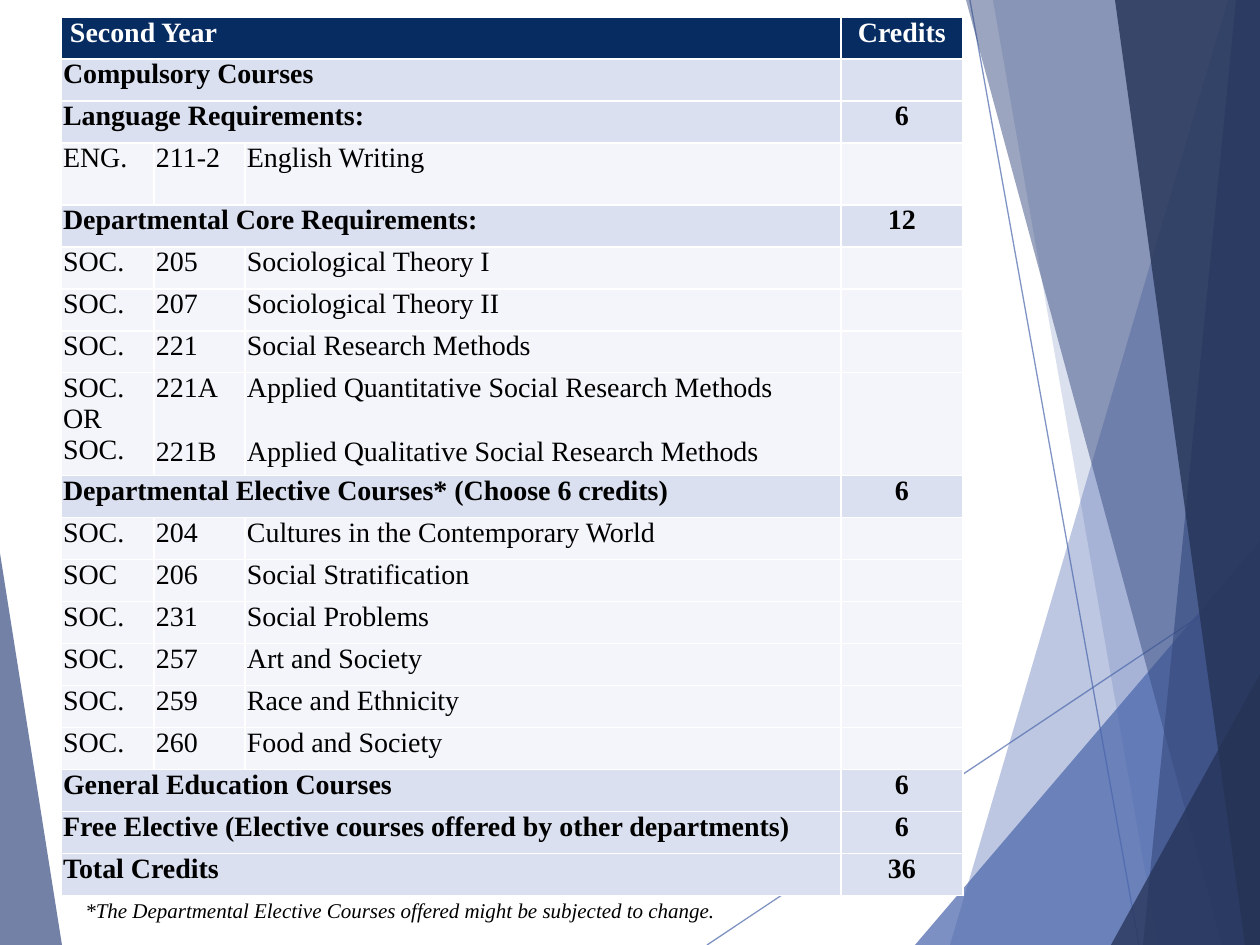
import lxml.etree
import pptx
import pptx.dml.color
import pptx.enum.shapes
import pptx.enum.text
import pptx.oxml.ns
import pptx.util

RGB = pptx.dml.color.RGBColor
WHITE = RGB(0xFF, 0xFF, 0xFF)
BLACK = RGB(0x00, 0x00, 0x00)
NAVY = RGB(0x07, 0x2C, 0x62)
PALE = RGB(0xDA, 0xE0, 0xEF)
BLUE = RGB(0x4A, 0x66, 0xAC)
DEEP = RGB(0x38, 0x4C, 0x81)
DARK = RGB(0x25, 0x33, 0x56)

WIDTH, HEIGHT = 1260, 945
SCALE = 914400 / 126
ROW_HEIGHT = 42
COLUMNS = [93, 91, 596, 122]
CENTER = pptx.enum.text.PP_ALIGN.CENTER
TOP = pptx.enum.text.MSO_ANCHOR.TOP
MIDDLE = pptx.enum.text.MSO_ANCHOR.MIDDLE

COURSES = [
    ("Second Year", "Credits"),
    ("Compulsory Courses", ""),
    ("Language Requirements:", "6"),
    ("ENG.", "211-2", "English Writing", ""),
    ("Departmental Core Requirements:", "12"),
    ("SOC.", "205", "Sociological Theory I", ""),
    ("SOC.", "207", "Sociological Theory II", ""),
    ("SOC.", "221", "Social Research Methods", ""),
    ("SOC.\nOR\nSOC.", "221A\n221B",
     "Applied Quantitative Social Research Methods\n"
     "Applied Qualitative Social Research Methods", ""),
    ("Departmental Elective Courses* (Choose 6 credits)", "6"),
    ("SOC.", "204", "Cultures in the Contemporary World", ""),
    ("SOC", "206", "Social Stratification", ""),
    ("SOC.", "231", "Social Problems", ""),
    ("SOC.", "257", "Art and Society", ""),
    ("SOC.", "259", "Race and Ethnicity", ""),
    ("SOC.", "260", "Food and Society", ""),
    ("General Education Courses", "6"),
    ("Free Elective (Elective courses offered by other departments)", "6"),
    ("Total Credits", "36"),
]
TALL_ROWS = {3: 62, 8: 103}


def px(value):
    return pptx.util.Emu(round(value * SCALE))


def apply(target, values):
    for name, value in values.items():
        setattr(target, name, value)


def child(parent, tag, **values):
    return lxml.etree.SubElement(parent, pptx.oxml.ns.qn(tag), values)


def set_opacity(element, percent):
    color = next(element.iter(pptx.oxml.ns.qn("a:srgbClr")))
    child(color, "a:alpha", val=str(percent * 1000))


class Page:
    def __init__(self, deck):
        self.slide = deck.slides.add_slide(deck.slide_layouts[6])
        self.shapes = self.slide.shapes
        self.font = {"name": "Times New Roman", "size": pptx.util.Pt(16)}

    def line(self, *ends):
        line = self.shapes.add_connector(
            pptx.enum.shapes.MSO_CONNECTOR.STRAIGHT, *map(px, ends))
        line.line.color.rgb = BLUE
        line.line.width = pptx.util.Pt(0.75)
        set_opacity(line._element, 70)
        child(line._element.spPr, "a:effectLst")

    def outline(self, points, color, opacity):
        builder = self.shapes.build_freeform(*points[0], scale=SCALE)
        builder.add_line_segments(points[1:], close=True)
        shape = builder.convert_to_shape()
        shape.shadow.inherit = False
        shape.line.fill.background()
        shape.fill.solid()
        shape.fill.fore_color.rgb = color
        set_opacity(shape._element, opacity)

    def fill_text(self, frame, text, align=None, color=BLACK, **extra):
        lines = text.split("\n")
        for index, words in enumerate(lines):
            para = frame.paragraphs[0] if index == 0 else frame.add_paragraph()
            para.alignment = align
            if len(lines) == 2 and index == 1:
                para.space_before = pptx.util.Pt(18.4)
            if words:
                span = para.add_run()
                span.text = words
                span.font.color.rgb = color
                apply(span.font, {**self.font, **extra})

    def borders(self, cell):
        properties = cell._tc.get_or_add_tcPr()
        for index, side in enumerate(("L", "R", "T", "B")):
            border = child(properties, "a:ln" + side, w="12700")
            child(child(border, "a:solidFill"), "a:srgbClr", val=str(WHITE))
            properties.insert(index, border)

    def table(self, left, top, rows):
        heights = [TALL_ROWS.get(i, ROW_HEIGHT) for i in range(len(rows))]
        table = self.shapes.add_table(
            len(rows), len(COLUMNS), px(left), px(top),
            px(sum(COLUMNS)), px(sum(heights))).table
        apply(table, {"first_row": False, "horz_banding": False})
        for column, width in zip(table.columns, COLUMNS):
            column.width = px(width)
        for index, values in enumerate(rows):
            table.rows[index].height = px(heights[index])
            header, group = index == 0, len(values) == 2
            cells = [table.cell(index, i) for i in range(len(COLUMNS))]
            for cell in cells:
                apply(cell, {"margin_left": px(2), "margin_right": px(2),
                             "margin_top": 0, "margin_bottom": 0,
                             "vertical_anchor": TOP})
                cell.fill.solid()
                cell.fill.fore_color.rgb = NAVY if header else PALE
                if not group:
                    set_opacity(cell._tc, 30)
                self.borders(cell)
            if group:
                cells[0].merge(cells[2])
                cells = [cells[0], cells[3]]
            if header:
                cells[0].margin_left = px(9)
            for cell, text in zip(cells, values):
                self.fill_text(cell.text_frame, text,
                               CENTER if cell is cells[-1] else None,
                               WHITE if header else BLACK, bold=group)

    def note(self, left, top, width, height, text):
        box = self.shapes.add_textbox(px(left), px(top), px(width), px(height))
        apply(box.text_frame, {"word_wrap": False, "vertical_anchor": MIDDLE})
        self.fill_text(box.text_frame, text, size=pptx.util.Pt(12), italic=True)


def main():
    deck = pptx.Presentation()
    apply(deck, {"slide_width": px(WIDTH), "slide_height": px(HEIGHT)})
    page = Page(deck)

    page.line(707, HEIGHT, WIDTH, 576)
    page.line(970, 0, 1139, HEIGHT)

    def panel(top, bottom, color, opacity):
        page.outline([(top, 0), (bottom, HEIGHT), (WIDTH, HEIGHT), (WIDTH, 0)],
                     color, opacity)

    def corner(left, top, color, opacity):
        page.outline([(left, HEIGHT), (WIDTH, top), (WIDTH, HEIGHT)],
                     color, opacity)

    panel(1228, 950, BLUE, 36)
    panel(993, 1158, BLUE, 20)
    corner(915, 541, BLUE, 72)
    panel(966, 1222, DEEP, 50)
    panel(1236, 1143, DEEP, 66)
    panel(1115, 1245, DARK, 80)
    corner(1111, 674, DARK, 76)
    page.outline([(0, 553), (62, HEIGHT), (0, HEIGHT)], DEEP, 70)

    page.table(61, 17, COURSES)
    page.note(73, 891, 668, 38, "*The Departmental Elective Courses offered "
              "might be subjected to change.")
    deck.save("out.pptx")


if __name__ == "__main__":
    main()
